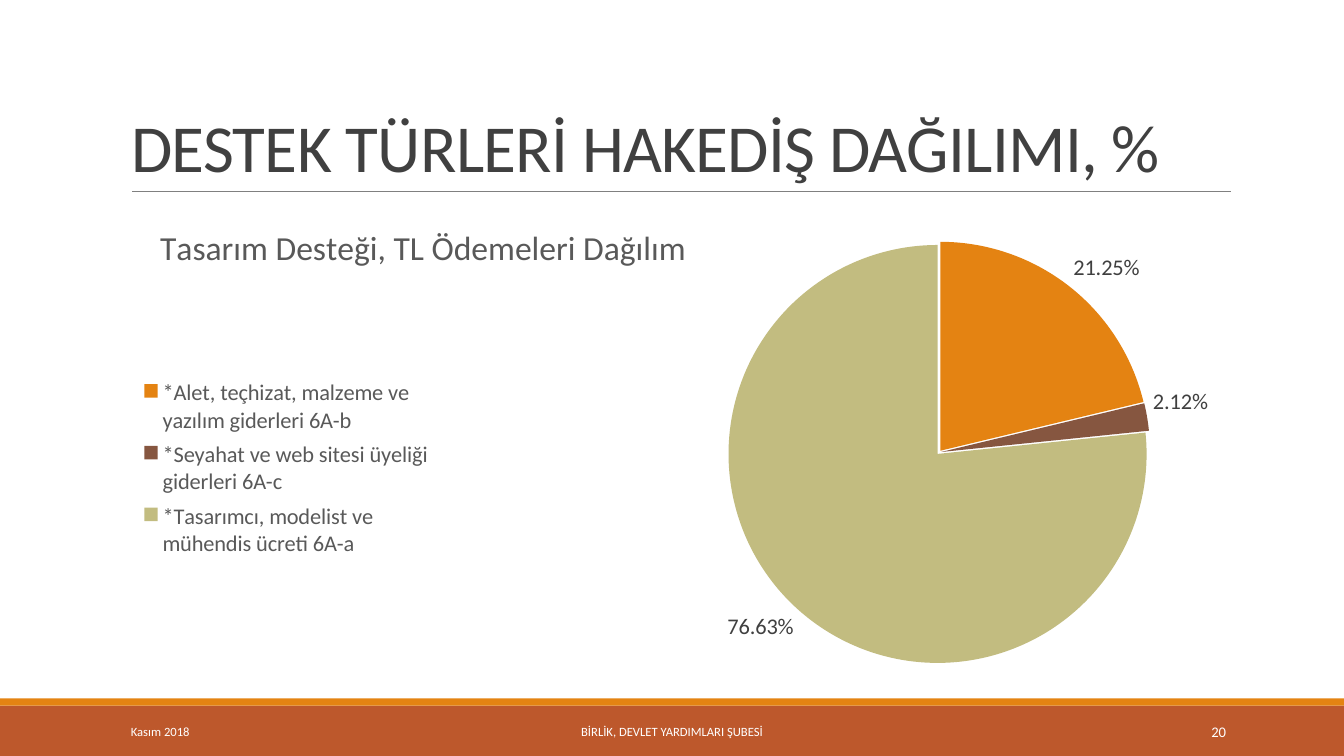
import pptx
import pptx.chart.data
import pptx.dml.color
import pptx.enum.chart
import pptx.enum.shapes
import pptx.enum.text
import pptx.oxml
import pptx.oxml.ns
import pptx.util

Inches = pptx.util.Inches
ALIGN = pptx.enum.text.PP_ALIGN
ANCHOR = pptx.enum.text.MSO_ANCHOR
FONT = "Calibri"
SHARES = [
    ("*Alet, teçhizat, malzeme ve yazılım giderleri 6A-b", 0.2125, "E48312"),
    ("*Seyahat ve web sitesi üyeliği giderleri 6A-c", 0.0212, "865640"),
    ("*Tasarımcı, modelist ve mühendis ücreti 6A-a", 0.7663, "C2BC80"),
]


def color(value):
    return pptx.dml.color.RGBColor.from_string(value)


def format_font(font, size, value):
    font.name = FONT
    font.size = pptx.util.Pt(size)
    font.bold = False
    font.color.rgb = color(value)


def write_text(frame, text, size, value, align=ALIGN.LEFT, anchor=ANCHOR.MIDDLE,
               line_spacing=None, tracking=None):
    frame.word_wrap = True
    frame.auto_size = pptx.enum.text.MSO_AUTO_SIZE.NONE
    frame.vertical_anchor = anchor
    paragraph = frame.paragraphs[0]
    paragraph.alignment = align
    paragraph.line_spacing = line_spacing
    run = paragraph.add_run()
    run.text = text
    format_font(run.font, size, value)
    if tracking is not None:
        run.font._element.set("spc", str(tracking))


def place(shape, left, top, width, height):
    shape.left, shape.top = Inches(left), Inches(top)
    shape.width, shape.height = Inches(width), Inches(height)


def add_band(slide, top, height, fill):
    shape = slide.shapes.add_shape(pptx.enum.shapes.MSO_SHAPE.RECTANGLE, Inches(0),
                                   Inches(top), Inches(13.33), Inches(height))
    shape.shadow.inherit = False
    shape.fill.solid()
    shape.fill.fore_color.rgb = color(fill)
    shape.line.fill.background()


def add_rule(slide, left, right, top):
    line = slide.shapes.add_connector(pptx.enum.shapes.MSO_CONNECTOR.STRAIGHT, Inches(left),
                                      Inches(top), Inches(right), Inches(top))
    line.line.color.rgb = color("808080")
    line.line.width = pptx.util.Pt(0.5)
    line._element.spPr.append(pptx.oxml.parse_xml(
        f'<a:effectLst {pptx.oxml.ns.nsdecls("a")}/>'))


def add_title(slide, text):
    title = slide.shapes.title
    place(title, 1.2, 0.31, 11, 1.59)
    write_text(title.text_frame, text, 48, "404040", anchor=ANCHOR.BOTTOM,
               line_spacing=0.85, tracking=-50)


def add_footer(slide, left, width, text, size, align):
    box = slide.shapes.add_textbox(Inches(left), Inches(7.06), Inches(width), Inches(0.4))
    write_text(box.text_frame, text, size, "FFFFFF", align=align)


def set_layout(element, index, **settings):
    for layout in element.findall(pptx.oxml.ns.qn("c:layout")):
        element.remove(layout)
    entries = "".join(f'<c:{name} val="{value}"/>' for name, value in settings.items())
    element.insert(index, pptx.oxml.parse_xml(
        f'<c:layout {pptx.oxml.ns.nsdecls("c")}><c:manualLayout>{entries}'
        '</c:manualLayout></c:layout>'))


def add_pie(slide):
    data = pptx.chart.data.CategoryChartData(number_format="0.00%")
    data.categories = [name for name, share, fill in SHARES]
    data.add_series("Series 1", [share for name, share, fill in SHARES])
    chart = slide.shapes.add_chart(pptx.enum.chart.XL_CHART_TYPE.PIE, Inches(1.2), Inches(1.98),
                                   Inches(10.92), Inches(4.77), data).chart
    format_font(chart.font, 10, "000000")

    chart.has_title = True
    write_text(chart.chart_title.text_frame, "Tasarım Desteği, TL Ödemeleri Dağılım", 24, "595959")
    set_layout(chart.chart_title._element, 1, xMode="edge", yMode="edge", x=0.03, y=0.04)

    chart.has_legend = True
    chart.legend.position = pptx.enum.chart.XL_LEGEND_POSITION.LEFT
    chart.legend.include_in_layout = False
    format_font(chart.legend.font, 16, "595959")
    set_layout(chart.legend._element, 1, xMode="edge", yMode="edge", x=0.01, y=0.36, w=0.28, h=0.4)

    set_layout(chart._chartSpace.chart.plotArea, 0, layoutTarget="inner", xMode="edge",
               yMode="edge", x=0.551, y=0.087, w=0.384, h=0.878)
    plot = chart.plots[0]
    plot.vary_by_categories = True
    series = plot.series[0]
    for index, (name, share, fill) in enumerate(SHARES):
        point_format = series.points[index].format
        point_format.fill.solid()
        point_format.fill.fore_color.rgb = color(fill)
    series._element.find(pptx.oxml.ns.qn("c:tx")).addnext(pptx.oxml.parse_xml(
        f'<c:explosion {pptx.oxml.ns.nsdecls("c")} val="1"/>'))

    labels = series.data_labels
    labels.show_value = True
    labels.show_percentage = False
    labels.number_format = "0.00%"
    labels.number_format_is_linked = False
    labels.position = pptx.enum.chart.XL_LABEL_POSITION.OUTSIDE_END
    format_font(labels.font, 16, "404040")


def main():
    presentation = pptx.Presentation()
    presentation.slide_width = Inches(13.33)
    presentation.slide_height = Inches(7.5)
    slide = presentation.slides.add_slide(presentation.slide_layouts[5])
    add_band(slide, 7, 0.5, "BD582C")
    add_band(slide, 6.93, 0.07, "E48312")
    add_rule(slide, 1.31, 12.21, 1.9)
    add_title(slide, "DESTEK TÜRLERİ HAKEDİŞ DAĞILIMI, %")
    add_footer(slide, 1.2, 2.7, "Kasım 2018", 9, ALIGN.LEFT)
    add_footer(slide, 4.03, 5.27, "BİRLİK, DEVLET YARDIMLARI ŞUBESİ", 9, ALIGN.CENTER)
    add_footer(slide, 10.83, 1.43, "20", 10.5, ALIGN.RIGHT)
    add_pie(slide)
    presentation.save("out.pptx")


if __name__ == "__main__":
    main()
